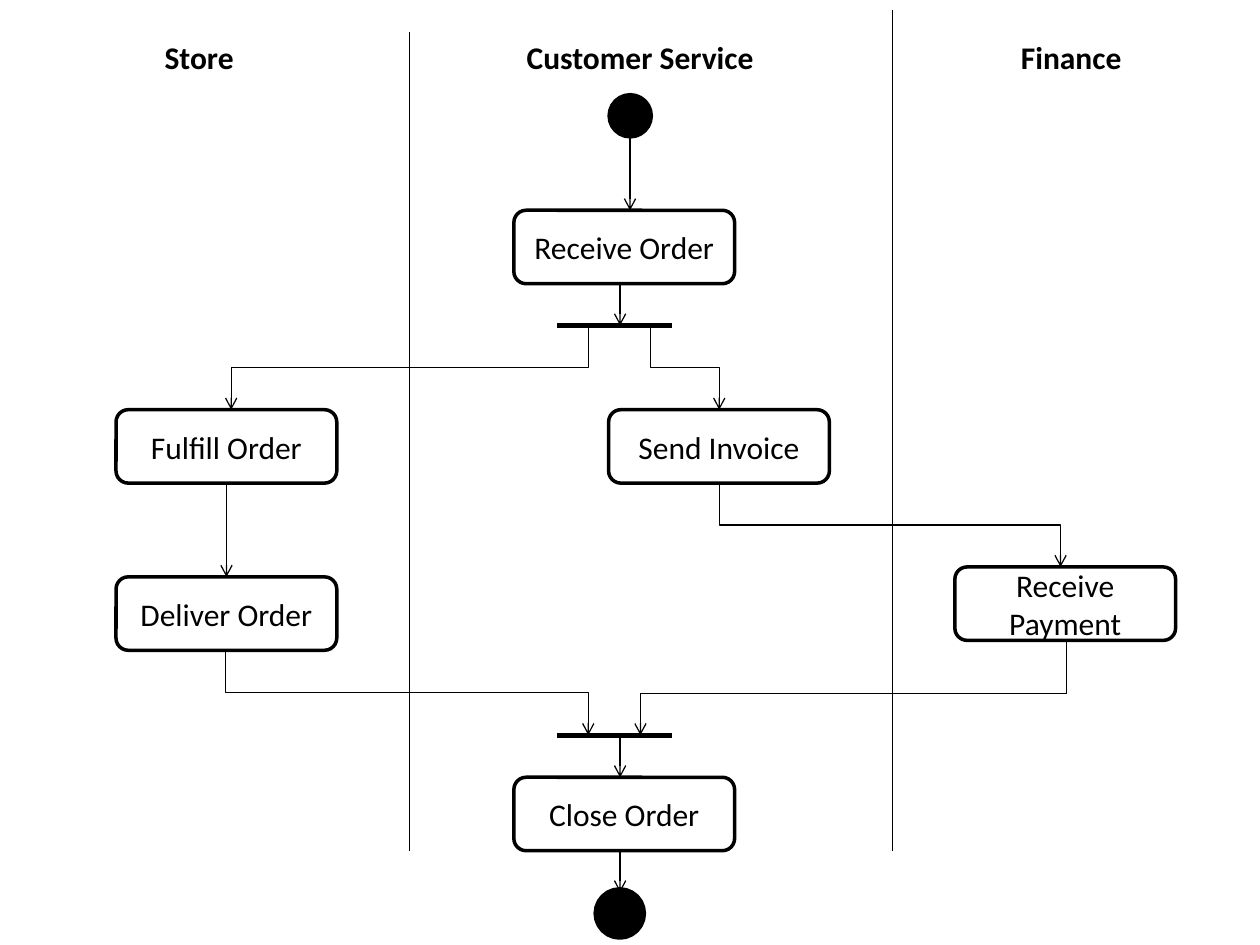
from lxml.etree import SubElement
from pptx import Presentation
from pptx.dml.color import RGBColor
from pptx.enum.shapes import MSO_CONNECTOR, MSO_SHAPE
from pptx.enum.text import MSO_ANCHOR, MSO_AUTO_SIZE, PP_ALIGN
from pptx.oxml.ns import qn
from pptx.util import Cm, Pt

BLACK = "000000"
WHITE = "FFFFFF"
LANE_WIDTH = 6.35
ACTION_WIDTH, ACTION_HEIGHT = 4.45, 1.48
FORK_Y, JOIN_Y = 6.56, 14.82
BAR_LEFT, BAR_RIGHT = 11.23, 13.54
MAIN_X = 12.5

LANES = [("Store", 0.84), ("Customer Service", 9.73), ("Finance", 18.42)]
DIVIDERS = [(8.26, 0.64), (17.99, 0.21)]
ACTIONS = [
    ("Receive Order", 10.36, 4.24),
    ("Close Order", 10.36, 15.67),
    ("Receive Payment", 19.25, 11.43),
    ("Send Invoice", 12.27, 8.26),
    ("Deliver Order", 2.34, 11.63),
    ("Fulfill Order", 2.34, 8.26),
]
STRAIGHT_FLOWS = [
    (12.7, 2.54, 4.24),
    (MAIN_X, 5.72, FORK_Y),
    (MAIN_X, JOIN_Y, 15.67),
    (MAIN_X, 17.15, 17.99),
]
BENT_FLOWS = [
    (11.86, FORK_Y, 4.66, 8.26, 0.5),
    (13.12, FORK_Y, 14.5, 8.26, 0.5),
    (14.5, 9.74, 21.38, 11.43, 0.5),
    (4.55, 13.11, 11.86, JOIN_Y, 0.5),
    (21.5, 12.91, 12.91, JOIN_Y, 0.56),
]


def color(hex_value):
    return RGBColor.from_string(hex_value)


def write_text(frame, text, bold=False):
    frame.word_wrap = True
    frame.text = text
    paragraph = frame.paragraphs[0]
    paragraph.alignment = PP_ALIGN.CENTER
    font = paragraph.runs[0].font
    font.name = "Calibri"
    font.size = Pt(18)
    font.bold = bold
    font.color.rgb = color(BLACK)


def add_lane_heading(slide, text, left):
    heading = slide.shapes.add_textbox(Cm(left), Cm(0.64), Cm(LANE_WIDTH), Cm(1.07))
    write_text(heading.text_frame, text, bold=True)
    heading.text_frame.auto_size = MSO_AUTO_SIZE.SHAPE_TO_FIT_TEXT


def add_node(slide, kind, left, top, width, height, fill, line_width):
    node = slide.shapes.add_shape(kind, Cm(left), Cm(top), Cm(width), Cm(height))
    node.shadow.inherit = False
    node.fill.solid()
    node.fill.fore_color.rgb = color(fill)
    node.line.color.rgb = color(BLACK)
    node.line.width = Pt(line_width)
    return node


def add_action(slide, text, left, top):
    action = add_node(slide, MSO_SHAPE.FLOWCHART_ALTERNATE_PROCESS, left, top,
                      ACTION_WIDTH, ACTION_HEIGHT, WHITE, 2)
    write_text(action.text_frame, text)
    action.text_frame.vertical_anchor = MSO_ANCHOR.MIDDLE
    return action


def add_terminal(slide, left, top, line_width):
    add_node(slide, MSO_SHAPE.FLOWCHART_CONNECTOR, left, top, 0.85, 0.85, BLACK, line_width)


def add_line(slide, x1, y1, x2, y2, width=0.75, arrow=False, kind=MSO_CONNECTOR.STRAIGHT):
    line = slide.shapes.add_connector(kind, Cm(x1), Cm(y1), Cm(x2), Cm(y2))
    line.line.color.rgb = color(BLACK)
    line.line.width = Pt(width)
    if arrow:
        SubElement(line.line._get_or_add_ln(), qn("a:tailEnd"), type="arrow")
    SubElement(line._element.spPr, qn("a:effectLst"))
    return line


def add_bent_flow(slide, x1, y1, x2, y2, bend):
    flow = add_line(slide, x1, y1, x2, y2, arrow=True, kind=MSO_CONNECTOR.ELBOW)
    run, drop = abs(x2 - x1), y2 - y1
    flow.left, flow.top = Cm((x1 + x2 - drop) / 2), Cm((y1 + y2 - run) / 2)
    flow.width, flow.height = Cm(drop), Cm(run)
    frame = flow._element.spPr.find(qn("a:xfrm"))
    goes_right = x2 > x1
    frame.set("rot", str((270 if goes_right else 90) * 60000))
    frame.set("flipH", "1" if goes_right else "0")
    adjustments = flow._element.spPr.find(qn("a:prstGeom")).get_or_add_avLst()
    SubElement(adjustments, qn("a:gd"), name="adj1", fmla=f"val {round(bend * 100000)}")


def main():
    presentation = Presentation()
    presentation.slide_width = Cm(25.4)
    presentation.slide_height = Cm(19.05)
    slide = presentation.slides.add_slide(presentation.slide_layouts[6])

    actions = {text: add_action(slide, text, left, top) for text, left, top in ACTIONS}
    for x, top in DIVIDERS:
        add_line(slide, x, top, x, 17.15)
    add_terminal(slide, 12.28, 1.91, 2)
    add_terminal(slide, 12.07, 17.99, 6)
    for bar_y in (FORK_Y, JOIN_Y):
        add_line(slide, BAR_LEFT, bar_y, BAR_RIGHT, bar_y, width=3)
    for x, start, end in STRAIGHT_FLOWS:
        add_line(slide, x, start, x, end, arrow=True)
    for flow in BENT_FLOWS:
        add_bent_flow(slide, *flow)
    delivery = add_line(slide, 4.56, 9.74, 4.56, 11.63, arrow=True)
    delivery.begin_connect(actions["Fulfill Order"], 2)
    delivery.end_connect(actions["Deliver Order"], 0)
    for text, left in LANES:
        add_lane_heading(slide, text, left)

    presentation.save("out.pptx")


if __name__ == "__main__":
    main()
